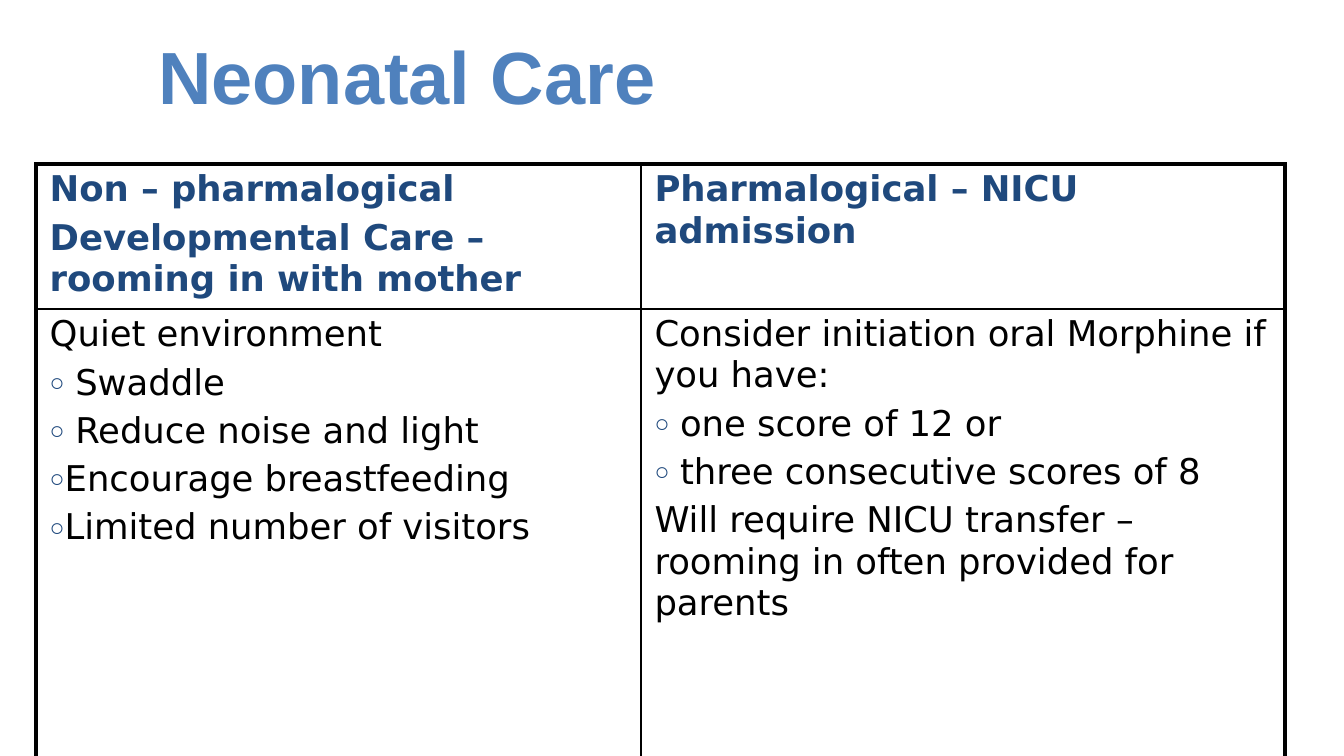
"""Build the Neonatal Care slide with its two-column comparison table."""
from dataclasses import dataclass

from lxml import etree
from pptx import Presentation
from pptx import util as u
from pptx.dml.color import RGBColor
from pptx.enum import text
from pptx.oxml.ns import qn


@dataclass(frozen=True)
class Theme:
    title: str = "4F81BD"
    accent: str = "1F497D"
    body: str = "000000"
    title_font: str = "Arial"
    table_font: str = "DejaVu Sans"
    title_size: float = 39.6
    table_size: float = 19
    gap_percent: int = 20
    bullet_percent: int = 70
    outer: float = 2.25
    inner: float = 1


THEME = Theme()
PLAIN, TIGHT, HANGING = None, 0, 0.19
TITLE = "Neonatal Care"
ROWS = [
    [
        [("Non – pharmalogical", PLAIN),
         ("Developmental Care – rooming in with mother", PLAIN)],
        [("Pharmalogical – NICU admission", PLAIN)],
    ],
    [
        [("Quiet environment", PLAIN),
         ("Swaddle", HANGING),
         ("Reduce noise and light", HANGING),
         ("Encourage breastfeeding", TIGHT),
         ("Limited number of visitors", TIGHT)],
        [("Consider initiation oral Morphine if you have:", PLAIN),
         ("one score of 12 or", HANGING),
         ("three consecutive scores of 8", HANGING),
         ("Will require NICU transfer – rooming in often provided for parents", PLAIN)],
    ],
]
COLUMN_WIDTHS = [4.5, 4.79]
ROW_HEIGHTS = [0.76, 3.55]


def style(paragraph, font, size, color, bold):
    paragraph.font.name = font
    paragraph.font.size = u.Pt(size)
    paragraph.font.bold = bold
    paragraph.font.color.rgb = RGBColor.from_string(color)


def add_gap(paragraph):
    gap = etree.SubElement(paragraph._p.get_or_add_pPr(), qn("a:spcBef"))
    etree.SubElement(gap, qn("a:spcPct"), val=str(THEME.gap_percent * 1000))


def add_bullet(paragraph, indent):
    properties = paragraph._p.get_or_add_pPr()
    properties.set("marL", str(u.Inches(indent)))
    properties.set("indent", str(u.Inches(-indent)))
    color = etree.SubElement(properties, qn("a:buClr"))
    etree.SubElement(color, qn("a:srgbClr"), val=THEME.accent)
    etree.SubElement(properties, qn("a:buSzPct"), val=str(THEME.bullet_percent * 1000))
    etree.SubElement(properties, qn("a:buFont"), typeface=THEME.title_font)
    etree.SubElement(properties, qn("a:buChar"), char="○")


def add_borders(cell, outer_edges):
    properties = cell._tc.get_or_add_tcPr()
    for place, edge in enumerate("LRTB"):
        width = THEME.outer if edge in outer_edges else THEME.inner
        line = etree.Element(qn(f"a:ln{edge}"), w=str(u.Pt(width)))
        fill = etree.SubElement(line, qn("a:solidFill"))
        etree.SubElement(fill, qn("a:srgbClr"), val=THEME.body)
        properties.insert(place, line)


def fill_cell(cell, items, header):
    cell.fill.background()
    cell.margin_left = cell.margin_right = u.Inches(0.1)
    cell.margin_top = cell.margin_bottom = u.Pt(2.7)
    frame = cell.text_frame
    for number, (wording, indent) in enumerate(items):
        paragraph = frame.add_paragraph() if number else frame.paragraphs[0]
        paragraph.text = wording
        if number:
            add_gap(paragraph)
        if indent is not PLAIN:
            add_bullet(paragraph, indent)
        style(paragraph, THEME.table_font, THEME.table_size,
              THEME.accent if header else THEME.body, header)


def add_title(slide):
    frame = slide.shapes.add_textbox(
        u.Inches(1.08), u.Inches(0.25), u.Inches(7.42), u.Inches(0.62)).text_frame
    frame.word_wrap = True
    frame.vertical_anchor = text.MSO_ANCHOR.MIDDLE
    heading = frame.paragraphs[0]
    heading.text = TITLE
    style(heading, THEME.title_font, THEME.title_size, THEME.title, True)


def add_care_table(slide):
    care = slide.shapes.add_table(
        len(ROW_HEIGHTS), len(COLUMN_WIDTHS), u.Inches(0.27), u.Inches(1.22),
        u.Inches(sum(COLUMN_WIDTHS)), u.Inches(sum(ROW_HEIGHTS))).table
    care.horz_banding = False
    for column, width in zip(care.columns, COLUMN_WIDTHS):
        column.width = u.Inches(width)
    for row, height in zip(care.rows, ROW_HEIGHTS):
        row.height = u.Inches(height)
    for r, row_items in enumerate(ROWS):
        for c, items in enumerate(row_items):
            cell = care.cell(r, c)
            fill_cell(cell, items, header=r == 0)
            add_borders(cell, "TB"[r] + "LR"[c])


def main():
    deck = Presentation()
    deck.slide_width = u.Inches(10)
    deck.slide_height = deck.slide_width * 9 // 16
    slide = deck.slides.add_slide(deck.slide_layouts[6])
    add_title(slide)
    add_care_table(slide)
    deck.save("out.pptx")


if __name__ == "__main__":
    main()
